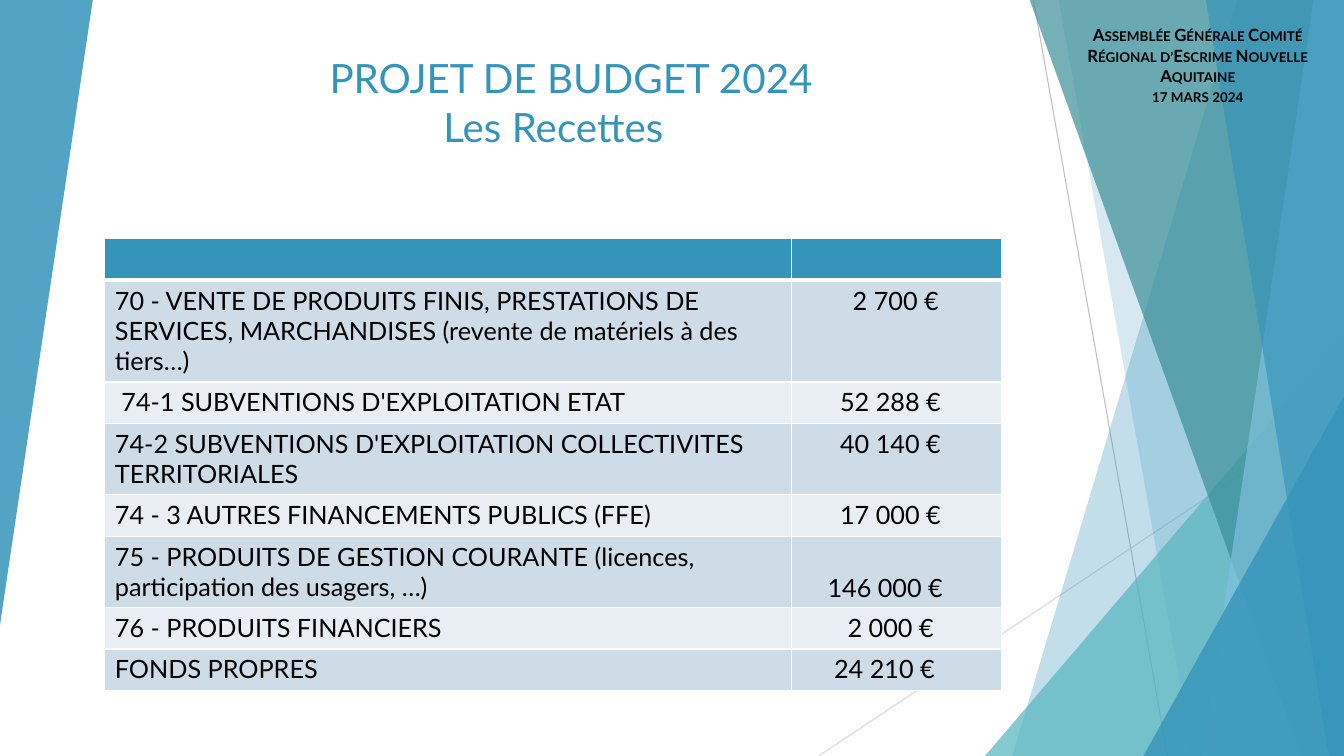
"""Build the 2024 revenue budget slide with its faceted side decoration."""
from dataclasses import dataclass

from lxml import etree
from pptx import Presentation
from pptx import util as u
from pptx.dml.color import RGBColor
from pptx.enum import shapes, text
from pptx.oxml.ns import qn

BLUE = RGBColor(0x34, 0x94, 0xBA)
AQUA = RGBColor(0x58, 0xB6, 0xC0)
TEAL = RGBColor(0x3A, 0x8F, 0x98)
SKY = RGBColor(0x7F, 0xC1, 0xDB)
SILVER = RGBColor(0xBF, 0xBF, 0xBF)
PALE_GREY = RGBColor(0xD9, 0xD9, 0xD9)
BAND_DARK = RGBColor(0xCE, 0xDC, 0xE7)
BAND_LIGHT = RGBColor(0xE8, 0xEE, 0xF3)
WHITE = RGBColor(0xFF, 0xFF, 0xFF)
BLACK = RGBColor(0, 0, 0)
FONT = "Lato"
RIGHT, TOP, BOTTOM = 13.33, -0.01, 7.5


@dataclass(frozen=True)
class Ray:
    start: tuple[float, float]
    end: tuple[float, float]
    color: RGBColor


@dataclass(frozen=True)
class Shard:
    top_x: float
    bottom_x: float
    color: RGBColor
    alpha: int


@dataclass(frozen=True)
class Wedge:
    box: tuple[float, float, float, float]
    color: RGBColor
    alpha: int
    rotation: int = 0


@dataclass(frozen=True)
class Revenue:
    label: str
    amount: str
    lines: int = 1
    inset: float = 0.6
    anchor: text.MSO_ANCHOR = text.MSO_ANCHOR.TOP


RAYS = [
    Ray((10.25, 0), (11.58, BOTTOM), SILVER),
    Ray((RIGHT, 4.03), (8.12, BOTTOM), PALE_GREY),
]
FACETS = [
    Shard(12.28, 10.04, BLUE, 30),
    Shard(10.5, 11.83, BLUE, 20),
    Wedge((9.77, 3.33, 3.56, 4.17), AQUA, 72),
    Shard(10.21, 12.91, TEAL, 70),
    Shard(13.03, 11.92, SKY, 70),
    Shard(11.96, 13.18, BLUE, 65),
    Wedge((11.34, 3.93, 1.99, 3.57), BLUE, 80),
    Wedge((0, 0, 0.92, 6.2), BLUE, 85, 180),
]
REVENUES = [
    Revenue("70 - VENTE DE PRODUITS FINIS, PRESTATIONS DE SERVICES, MARCHANDISES "
            "(revente de matériels à des tiers…)", "2 700 €", 3, 0.62),
    Revenue(" 74-1 SUBVENTIONS D'EXPLOITATION ETAT", "52 288 €"),
    Revenue("74-2 SUBVENTIONS D'EXPLOITATION COLLECTIVITES TERRITORIALES", "40 140 €", 2),
    Revenue("74 - 3 AUTRES FINANCEMENTS PUBLICS (FFE)", "17 000 €"),
    Revenue("75 - PRODUITS DE GESTION COURANTE (licences, participation des usagers, …)",
            "146 000 €", 2, 0.58, text.MSO_ANCHOR.BOTTOM),
    Revenue("76 - PRODUITS FINANCIERS", "2 000 €", inset=0.67),
    Revenue("FONDS PROPRES", "24 210 €", inset=0.66),
]


def draw_ray(slide, ray: Ray) -> None:
    """Draw one thin background line."""
    line = slide.shapes.add_connector(
        shapes.MSO_CONNECTOR.STRAIGHT, *map(u.Inches, ray.start + ray.end))
    line.line.color.rgb = ray.color
    line.line.width = u.Pt(0.75)
    etree.SubElement(line._element.spPr, qn("a:effectLst"))


def draw_facet(slide, facet: Shard | Wedge) -> None:
    """Draw one translucent facet, either a shard or a wedge."""
    if isinstance(facet, Shard):
        corners = [(facet.top_x, TOP), (RIGHT, TOP), (RIGHT, BOTTOM), (facet.bottom_x, BOTTOM)]
        start, *rest = [(u.Inches(x), u.Inches(y)) for x, y in corners]
        outline = slide.shapes.build_freeform(*start)
        outline.add_line_segments(rest, close=True)
        pane = outline.convert_to_shape()
    else:
        pane = slide.shapes.add_shape(
            shapes.MSO_SHAPE.ISOSCELES_TRIANGLE, *map(u.Inches, facet.box))
        pane.adjustments[0] = 1
        pane.rotation = facet.rotation
    pane.shadow.inherit = False
    pane.line.fill.background()
    pane.fill.solid()
    pane.fill.fore_color.rgb = facet.color
    tint = pane._element.spPr.find(qn("a:solidFill"))[0]
    etree.SubElement(tint, qn("a:alpha"), val=str(facet.alpha * 1000))


def style(paragraph, size: float, color: RGBColor, bold: bool = False) -> None:
    """Apply the slide font to a paragraph."""
    font = paragraph.font
    font.name, font.size, font.bold = FONT, u.Pt(size), bold
    font.color.rgb = color


def add_text(slide, box: tuple[float, float, float, float], lines: list[str]):
    """Add a wrapping text box with one paragraph per line."""
    frame = slide.shapes.add_textbox(*map(u.Inches, box)).text_frame
    frame.word_wrap = True
    frame.text = "\n".join(lines)
    return frame


def style_cell(cell, fill: RGBColor, bottom_width: float) -> None:
    """Fill a cell, set its font and give it white borders."""
    style(cell.text_frame.paragraphs[0], 18, BLACK)
    cell.fill.solid()
    cell.fill.fore_color.rgb = fill
    properties = cell._tc.get_or_add_tcPr()
    for position, side in enumerate(("lnL", "lnR", "lnT", "lnB")):
        width = bottom_width if side == "lnB" else 1
        border = etree.Element(qn(f"a:{side}"), w=str(u.Pt(width)))
        paint = etree.SubElement(border, qn("a:solidFill"))
        etree.SubElement(paint, qn("a:srgbClr"), val=str(WHITE))
        properties.insert(position, border)


def draw_revenues(slide) -> None:
    """Draw the revenue table under its empty header row."""
    heights = [0.41] + [0.41 + 0.3 * (revenue.lines - 1) for revenue in REVENUES]
    table = slide.shapes.add_table(
        len(heights), 2, u.Inches(1.04), u.Inches(2.37),
        u.Inches(8.89), u.Inches(sum(heights))).table
    for column, width in zip(table.columns, (6.81, 2.08)):
        column.width = u.Inches(width)
    for row, height in zip(table.rows, heights):
        row.height = u.Inches(height)
    for cell in table.rows[0].cells:
        style_cell(cell, BLUE, 3)
    for index, revenue in enumerate(REVENUES, 1):
        label, amount = table.rows[index].cells
        label.text, amount.text = revenue.label, revenue.amount
        amount.text_frame.paragraphs[0].alignment = text.PP_ALIGN.RIGHT
        amount.margin_right = u.Inches(revenue.inset)
        amount.vertical_anchor = revenue.anchor
        for cell in (label, amount):
            style_cell(cell, BAND_DARK if index % 2 else BAND_LIGHT, 1)


def main() -> None:
    """Assemble and save the slide."""
    deck = Presentation()
    deck.slide_width, deck.slide_height = u.Inches(RIGHT), u.Inches(BOTTOM)
    slide = deck.slides.add_slide(deck.slide_layouts[6])
    for ray in RAYS:
        draw_ray(slide, ray)
    for facet in FACETS:
        draw_facet(slide, facet)

    title = add_text(slide, (3.17, 0.45, 8.49, 1.09), ["PROJET DE BUDGET 2024", "Les Recettes"])
    title.vertical_anchor = text.MSO_ANCHOR.BOTTOM
    for paragraph in title.paragraphs:
        style(paragraph, 28.8, BLUE)
    title.paragraphs[1]._p.get_or_add_pPr().set("marL", str(u.Inches(1.13)))

    draw_revenues(slide)

    meeting = add_text(slide, (10.43, 0.2, 2.9, 0.71), [
        "Assemblée Générale Comité Régional d’Escrime Nouvelle Aquitaine", "17 mars 2024"])
    for paragraph in meeting.paragraphs:
        style(paragraph, 12, BLACK, bold=True)
        paragraph.alignment = text.PP_ALIGN.CENTER
        paragraph._p.pPr.find(qn("a:defRPr")).set("cap", "small")
    deck.save("out.pptx")


if __name__ == "__main__":
    main()
